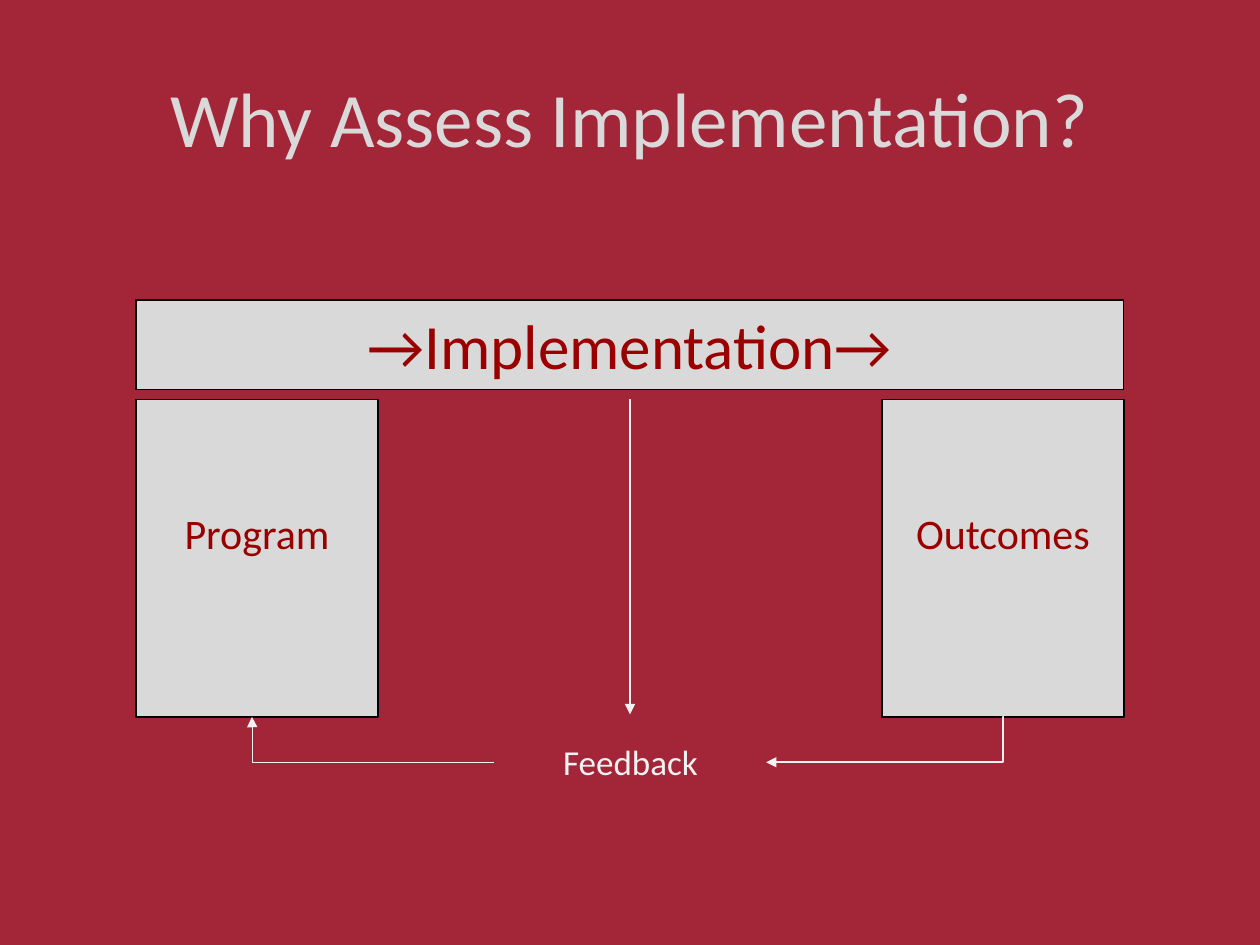
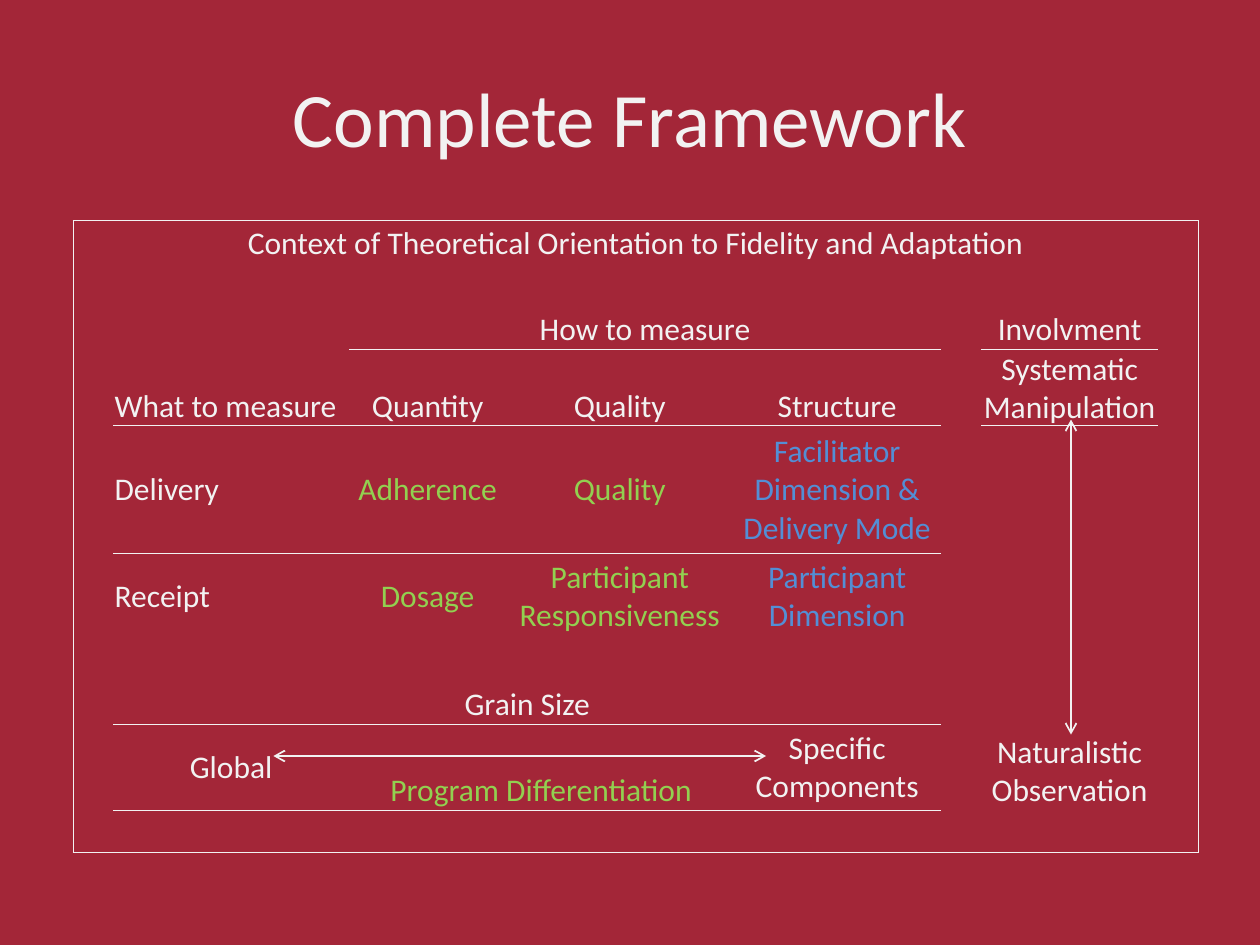
from dataclasses import dataclass

from lxml import etree
from pptx import Presentation
from pptx import util as u
from pptx.dml.color import RGBColor
from pptx.enum import shapes, text
from pptx.oxml.ns import qn

PX = 9144  # 100 px to the inch


@dataclass(frozen=True)
class Theme:
    font: str = "Calibri"
    crimson: str = "A32638"
    grey: str = "D9D9D9"
    white: str = "F2F2F2"
    dark_red: str = "9A0000"
    black: str = "000000"
    green: str = "92D050"
    blue: str = "538ED5"
    title: int = 44
    banner: int = 36
    box: int = 24
    label: int = 20
    cell: int = 18


T = Theme()
CENTER, LEFT = text.PP_ALIGN.CENTER, text.PP_ALIGN.LEFT
MIDDLE, BOTTOM = text.MSO_ANCHOR.MIDDLE, text.MSO_ANCHOR.BOTTOM
STRAIGHT, ELBOW = shapes.MSO_CONNECTOR.STRAIGHT, shapes.MSO_CONNECTOR.ELBOW


def write(frame, words, size, color, align=CENTER):
    frame.word_wrap = True
    paragraph = frame.paragraphs[0]
    paragraph.alignment = align
    run = paragraph.add_run()
    run.text = words
    run.font.name, run.font.size = T.font, u.Pt(size)
    run.font.color.rgb = RGBColor.from_string(color)


def connect(slide, kind, ends, width, heads, bend=None):
    line = slide.shapes.add_connector(kind, *[v * PX for v in ends])
    line.line.color.rgb = RGBColor.from_string(T.white)
    line.line.width = u.Pt(width)
    properties = line.element.spPr
    outline = properties.find(qn("a:ln"))
    for tag, head in heads.items():
        etree.SubElement(outline, qn("a:" + tag), type=head)
    etree.SubElement(properties, qn("a:effectLst"))
    if bend is not None:
        adjust = properties.find(qn("a:prstGeom")).find(qn("a:avLst"))
        etree.SubElement(adjust, qn("a:gd"), name="adj1", fmla=f"val {bend}")


prs = Presentation()
prs.slide_width, prs.slide_height = 1000 * PX, 750 * PX

# Shared background and titles
backdrop = prs.slide_master.background.fill
backdrop.solid()
backdrop.fore_color.rgb = RGBColor.from_string(T.crimson)
slides = []
for words, color in [("Why Assess Implementation?", T.grey), ("Complete Framework", T.white)]:
    slide = prs.slides.add_slide(prs.slide_layouts[6])
    title = slide.shapes.add_textbox(*[v * PX for v in (50, 30, 900, 125)])
    title.text_frame.vertical_anchor = MIDDLE
    write(title.text_frame, words, T.title, color)
    slides.append(slide)
why, framework = slides

# Program, outcomes and the implementation bar above them
for words, area, size, inset in [
    ("Program", (108, 317, 192, 252), T.box, 86),
    ("Outcomes", (700, 317, 192, 252), T.box, 86),
    ("→Implementation→", (108, 238, 784, 71), T.banner, 5),
]:
    block = why.shapes.add_shape(shapes.MSO_SHAPE.RECTANGLE, *[v * PX for v in area])
    block.shadow.inherit = False
    block.fill.solid()
    block.fill.fore_color.rgb = RGBColor.from_string(T.grey)
    block.line.color.rgb = RGBColor.from_string(T.black)
    block.line.width = u.Pt(0.75)
    block.text_frame.vertical_anchor = text.MSO_ANCHOR.TOP
    block.text_frame.margin_top = inset * PX
    write(block.text_frame, words, size, T.dark_red)

# Feedback loop
feedback = why.shapes.add_textbox(*[v * PX for v in (392, 583, 217, 44)])
write(feedback.text_frame, "Feedback", T.label, T.white)
arrow = {"tailEnd": "triangle"}
connect(why, ELBOW, (796, 569, 608, 605), 1, arrow, bend=100)
connect(why, ELBOW, (392, 605, 200, 569), 0.75, arrow, bend=99900)
connect(why, STRAIGHT, (500, 317, 500, 567), 1, arrow)

# Framework table
columns = [32, 187, 125, 180, 165, 32, 140, 32]
rows = [34, 34, 34, 61, 101, 68, 34, 34, 68, 34]
last_row, last_column = len(rows) - 1, len(columns) - 1
frame = framework.shapes.add_table(
    len(rows), len(columns), 58 * PX, 175 * PX, sum(columns) * PX, sum(rows) * PX)
grid = frame.table
grid.first_row = grid.horz_banding = False
NO_STYLE = "{2D5ABB26-0587-4C30-8999-92F81FD0307C}"
next(frame.element.iter(qn("a:tableStyleId"))).text = NO_STYLE
for column, width in zip(grid.columns, columns):
    column.width = width * PX
for row, height in zip(grid.rows, rows):
    row.height = height * PX
for row, first, last in [(0, 0, 7), (2, 2, 4), (7, 1, 4), (8, 2, 3)]:
    grid.cell(row, first).merge(grid.cell(row, last))

# Outer frame, and rules under the headings
ruled = {(2, 2), (2, 3), (2, 4), (2, 6)}
ruled |= {(row, column) for row in (3, 7) for column in range(1, 5)}
for r in range(len(rows)):
    for c in range(len(columns)):
        cell = grid.cell(r, c)
        cell.margin_left = cell.margin_right = cell.margin_top = PX
        cell.margin_bottom = 0
        edges = {
            "lnL": c == 0,
            "lnR": c == last_column or (r, c) == (0, 0),
            "lnT": r == 0 or (r - 1, c) in ruled,
            "lnB": r == last_row or (r, c) in ruled,
        }
        properties = cell._tc.get_or_add_tcPr()
        for tag, drawn in edges.items():
            if drawn:
                edge = etree.SubElement(properties, qn("a:" + tag), w=str(u.Pt(0.5)))
                fill = etree.SubElement(edge, qn("a:solidFill"))
                etree.SubElement(fill, qn("a:srgbClr"), val=T.white)
        cell.fill.background()

# Table wording: row, column, words, colour, anchor
for r, c, words, color, anchor in [
    (0, 0, "Context of Theoretical Orientation to Fidelity and Adaptation", T.white, BOTTOM),
    (2, 2, "How to measure", T.white, BOTTOM),
    (2, 6, "Involvment", T.white, BOTTOM),
    (3, 1, "What to measure", T.white, BOTTOM),
    (3, 2, "Quantity", T.white, BOTTOM),
    (3, 3, "Quality", T.white, BOTTOM),
    (3, 4, "Structure", T.white, BOTTOM),
    (3, 6, "Systematic Manipulation", T.white, BOTTOM),
    (4, 1, "Delivery", T.white, MIDDLE),
    (4, 2, "Adherence", T.green, MIDDLE),
    (4, 3, "Quality", T.green, MIDDLE),
    (4, 4, "Facilitator Dimension & Delivery Mode", T.blue, MIDDLE),
    (5, 1, "Receipt", T.white, MIDDLE),
    (5, 2, "Dosage", T.green, MIDDLE),
    (5, 3, "Participant Responsiveness", T.green, MIDDLE),
    (5, 4, "Participant Dimension", T.blue, MIDDLE),
    (7, 1, "Grain Size", T.white, BOTTOM),
    (8, 1, "Global", T.white, MIDDLE),
    (8, 2, "Program Differentiation", T.green, BOTTOM),
    (8, 4, "Specific Components", T.white, MIDDLE),
    (8, 6, "Naturalistic Observation", T.white, BOTTOM),
]:
    cell = grid.cell(r, c)
    cell.vertical_anchor = anchor
    row_heading = c == 1 and r in (3, 4, 5)
    write(cell.text_frame, words, T.cell, color, LEFT if row_heading else CENTER)

# Involvement and grain size ranges
both_ways = {"headEnd": "arrow", "tailEnd": "arrow"}
connect(framework, STRAIGHT, (850, 333, 850, 583), 1, both_ways)
connect(framework, STRAIGHT, (608, 600, 217, 600), 1, both_ways)

prs.save("out.pptx")
